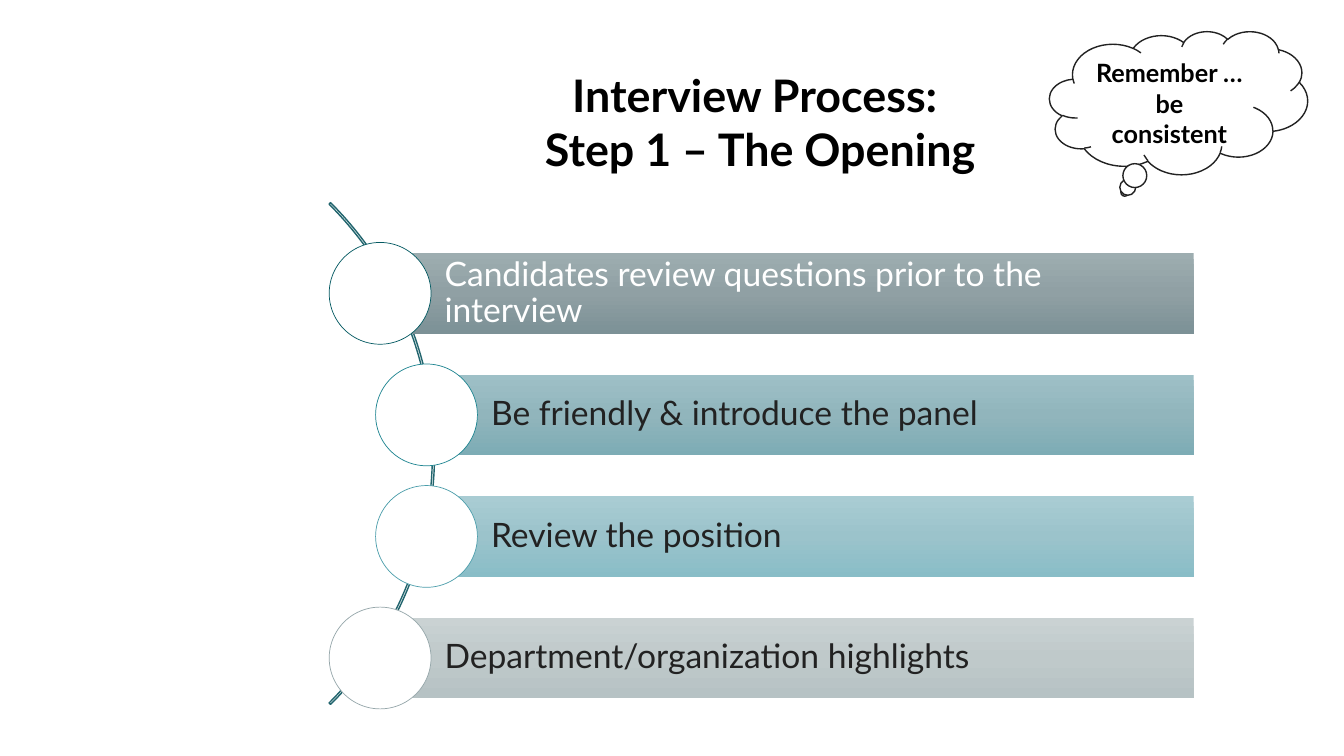
from copy import deepcopy
from pptx import Presentation
from pptx import util as u
from pptx.dml.color import RGBColor
from pptx.enum import shapes, text

SHAPE = shapes.MSO_SHAPE
MIDDLE = text.MSO_ANCHOR.MIDDLE
CENTER = text.PP_ALIGN.CENTER


def color(value):
    return RGBColor.from_string(value)


def outlined(kind, left, top, width, height, line, weight):
    """Add a white preset shape with a thin outline."""
    shape = slide.shapes.add_shape(
        kind, u.Inches(left), u.Inches(top), u.Inches(width), u.Inches(height))
    shape.shadow.inherit = False
    shape.fill.solid()
    shape.fill.fore_color.rgb = color("FFFFFF")
    shape.line.color.rgb = color(line)
    shape.line.width = u.Pt(weight)
    return shape


deck = Presentation()
deck.slide_width, deck.slide_height = u.Inches(13.33), u.Inches(7.5)
slide = deck.slides.add_slide(deck.slide_layouts[5])

# Title
title = slide.shapes.title
title_box = {"left": 4.22, "top": 0.62, "width": 6.64, "height": 1.18}
for side, length in title_box.items():
    setattr(title, side, u.Inches(length))
title.text_frame.text = "Interview Process: \nStep 1 – The Opening"
title.text_frame.vertical_anchor = MIDDLE

# Reminder cloud
reminder = outlined(SHAPE.CLOUD_CALLOUT, 10.41, 0.31, 2.56, 1.42, "222222", 1)
reminder.text_frame.text = "Remember … be consistent"
reminder.text_frame.word_wrap = True
reminder.text_frame.vertical_anchor = text.MSO_ANCHOR.TOP

# Bold headings share one format
for heading, size in ((title, 32), (reminder, 18)):
    for line in heading.text_frame.paragraphs:
        line.alignment = CENTER
        heading_format = {"name": "Lato", "size": u.Pt(size), "bold": True}
        for attribute, value in heading_format.items():
            setattr(line.font, attribute, value)
        line.font.color.rgb = color("000000")

# Arc linking the steps
arc = outlined(SHAPE.BLOCK_ARC, -2.73, 0.98, 7.04, 7.04, "22656E", 1)
for index, value in enumerate((189, 27, 0.003)):
    arc.adjustments[index] = value

# Steps: wording, bar left, gradient, text colour, circle outline
steps = [
    ("Candidates review questions prior to the interview", 3.77,
     ("9DADB0", "90A0A4", "7C9196"), "FFFFFF", "035961"),
    ("Be friendly & introduce the panel", 4.23,
     ("9EC0C7", "91B5BC", "7DACB5"), "222222", "1D8490"),
    ("Review the position", 4.23,
     ("A9CCD3", "9BC3CB", "89BDC7"), "222222", "4C9EAB"),
    ("Department/organization highlights", 3.77,
     ("CAD2D3", "BFC9CA", "B6C2C4"), "222222", "96A7AA"),
]
BAR_RIGHT, BAR_HEIGHT, FIRST_TOP, STEP_PITCH = 11.84, 0.8, 2.51, 1.206
CIRCLE = 1.01

for row, (wording, left, gradient, ink, outline) in enumerate(steps):
    top = FIRST_TOP + row * STEP_PITCH

    # Bar with a three-stop vertical gradient
    bar = slide.shapes.add_shape(
        SHAPE.RECTANGLE, u.Inches(left), u.Inches(top),
        u.Inches(BAR_RIGHT - left), u.Inches(BAR_HEIGHT))
    bar.shadow.inherit = False
    bar.line.fill.background()
    bar.fill.gradient()
    bar.fill.gradient_angle = 270
    first_stop = bar._element.spPr.xpath(".//a:gs")[0]
    first_stop.addnext(deepcopy(first_stop))
    for stop, position, shade in zip(bar.fill.gradient_stops, (0, 0.5, 1), gradient):
        stop.position = position
        stop.color.rgb = color(shade)

    # Wording
    frame = bar.text_frame
    frame_format = {"word_wrap": True, "vertical_anchor": MIDDLE,
                    "margin_left": u.Inches(0.64), "margin_right": u.Inches(0.07),
                    "margin_top": u.Inches(0.07), "margin_bottom": u.Inches(0.07)}
    for attribute, value in frame_format.items():
        setattr(frame, attribute, value)
    frame.text = wording
    step_line = frame.paragraphs[0]
    step_line.alignment = text.PP_ALIGN.LEFT
    step_line.line_spacing = 0.9
    step_line.font.name, step_line.font.size = "Lato", u.Pt(24)
    step_line.font.color.rgb = color(ink)

    # Circle centred on the bar's left end
    outlined(SHAPE.OVAL, left - CIRCLE / 2, top + (BAR_HEIGHT - CIRCLE) / 2,
             CIRCLE, CIRCLE, outline, 0.5)

deck.save("out.pptx")
